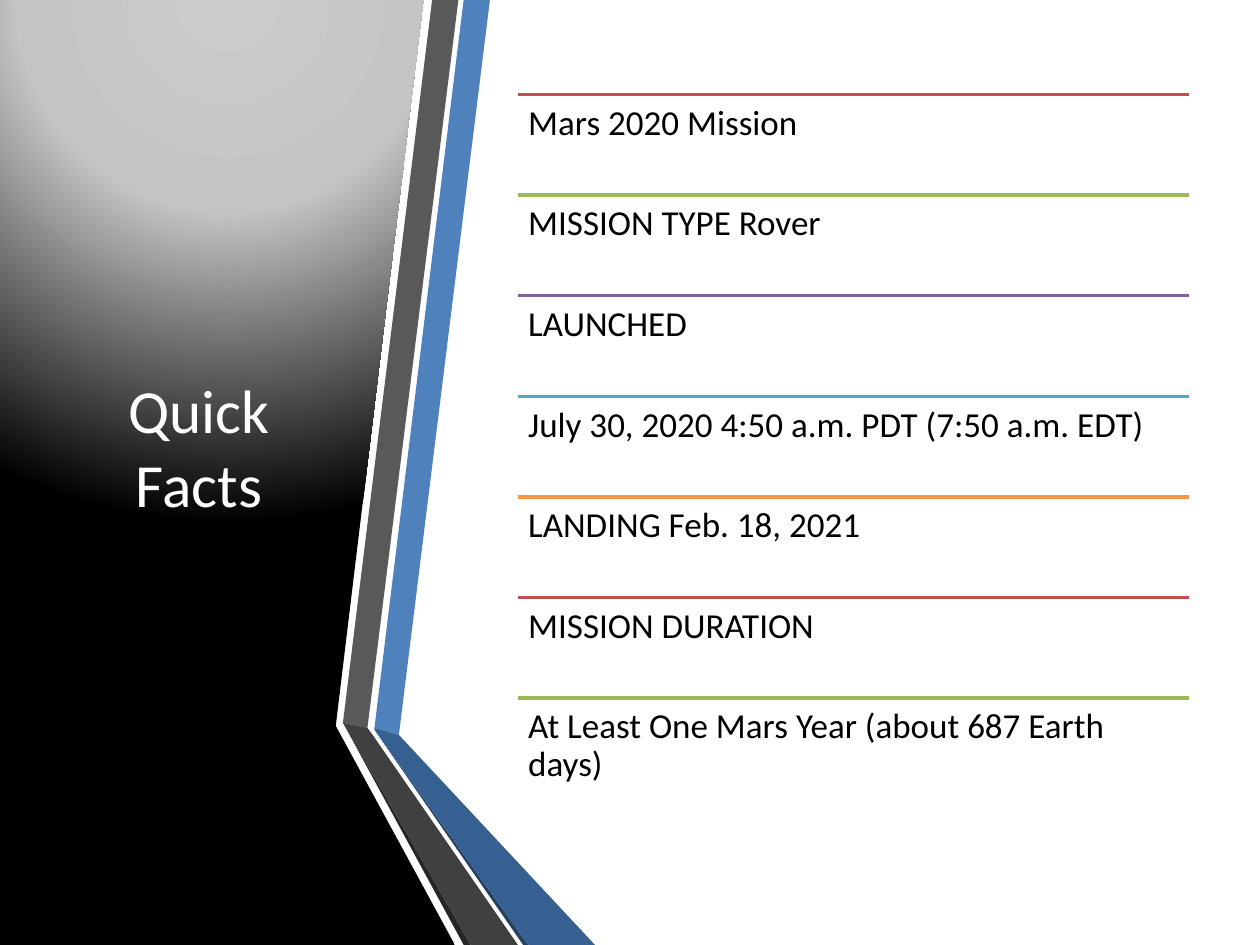
"""Build the Quick Facts slide: a folded ribbon panel beside seven ruled lines."""
from lxml import etree
from pptx import Presentation
from pptx.dml.color import RGBColor
from pptx.enum.shapes import MSO_CONNECTOR
from pptx.enum.text import MSO_ANCHOR, MSO_AUTO_SIZE, PP_ALIGN
from pptx.oxml import parse_xml
from pptx.oxml.ns import qn
from pptx.util import Pt

STRAIGHT = MSO_CONNECTOR.STRAIGHT
MIDDLE, TOP = MSO_ANCHOR.MIDDLE, MSO_ANCHOR.TOP
CENTER, LEFT = PP_ALIGN.CENTER, PP_ALIGN.LEFT
NO_FIT = MSO_AUTO_SIZE.NONE

TITLE = "Quick Facts"
FACTS = [
    "Mars 2020 Mission",
    "MISSION TYPE Rover",
    "LAUNCHED",
    "July 30, 2020 4:50 a.m. PDT (7:50 a.m. EDT)",
    "LANDING Feb. 18, 2021",
    "MISSION DURATION",
    "At Least One Mars Year (about 687 Earth days)",
]
THEME = {
    "font": "Calibri",
    "title": (35, "FFFFFF"),
    "fact": (20, "000000"),
    "rules": ["C0504D", "9BBB59", "8064A2", "4BACC6", "F79646"],
    "glow": [(0, "CCCCCC"), (40, "C4C4C4"), (100, "000000")],
    "blue": "4F81BD", "gray": "595959",
    "blue fold": "376092", "gray fold": "404040",
    "blue edge": "254061", "gray edge": "262626",
}
WIDE, HIGH = 720, 540
PANEL = [(190, 0), (242, 0), (192.2, 414), (192.2, 414.7), (260, HIGH), (0, HIGH), (0, 0)]
BANDS = [
    ("blue", [(213.8, 416.2), (228.2, 419.8), (280, 0), (265, 0)]),
    ("gray", [(262, 0), (247, 0), (195.8, 412.6), (210.2, 415.5)]),
    ("gray edge", [(195.8, 412.6), (265, HIGH), (268.6, HIGH)]),
    ("blue edge", [(213.8, 416.9), (298.8, HIGH), (302.4, HIGH)]),
    ("blue fold", [(213.8, 416.9), (302.4, HIGH), (339.8, HIGH), (228.2, 419.8), (213.8, 416.2)]),
    ("gray fold", [(295.9, HIGH), (213.1, 419.8), (210.2, 415.5), (195.8, 412.6), (268.6, HIGH)]),
]
TITLE_BOX = (31.7, 54, 164.2, 401.8)
ROW_X, ROW_Y, ROW_W, STEP = 295.8, 54, 383.5, 57.5


def put(obj, form):
    for name, value in form.items():
        setattr(obj, name, value)


def paint(fill, tone):
    fill.solid()
    fill.fore_color.rgb = RGBColor.from_string(tone)


def trace(shapes, points):
    pen = shapes.build_freeform(*points[0], scale=float(Pt(1)))
    pen.add_line_segments(points[1:], close=True)
    shape = pen.convert_to_shape()
    shape.shadow.inherit = False
    shape.line.fill.background()
    return shape


def glow(shape):
    stops = "".join(
        f'<a:gs pos="{pos * 1000}"><a:srgbClr val="{tone}"/></a:gs>'
        for pos, tone in THEME["glow"]
    )
    grad = parse_xml(
        '<a:gradFill xmlns:a="http://schemas.openxmlformats.org/drawingml/2006/main">'
        f'<a:gsLst>{stops}</a:gsLst><a:path path="circle">'
        '<a:fillToRect l="50000" t="-80000" r="50000" b="180000"/></a:path></a:gradFill>'
    )
    shape.fill.background()
    props = shape.element.spPr
    props.replace(props.find(qn("a:noFill")), grad)


def write(shape, text, kind, frame, para):
    size, tone = THEME[kind]
    box = shape.text_frame
    box.text = text
    put(box, {"word_wrap": True, "auto_size": NO_FIT, **frame})
    line = box.paragraphs[0]
    put(line, para)
    font = line.runs[0].font
    put(font, {"name": THEME["font"], "size": Pt(size)})
    font.color.rgb = RGBColor.from_string(tone)


def add_title(slide):
    title = slide.shapes.title
    slide.shapes.element.append(title.element)
    put(title, dict(zip(("left", "top", "width", "height"), map(Pt, TITLE_BOX))))
    write(title, TITLE, "title", {"vertical_anchor": MIDDLE}, {"alignment": CENTER})


def add_rows(shapes):
    pad = {f"margin_{side}": Pt(6) for side in ("left", "top", "right", "bottom")}
    rules = THEME["rules"]
    for i, fact in enumerate(FACTS):
        x, y, w = Pt(ROW_X), Pt(ROW_Y + i * STEP), Pt(ROW_W)
        rule = shapes.add_connector(STRAIGHT, x, y, x + w, y)
        rule.line.width = Pt(2)
        paint(rule.line.fill, rules[i % len(rules)])
        etree.SubElement(rule.element.spPr, qn("a:effectLst"))
        box = shapes.add_textbox(x, y, w, Pt(STEP))
        write(box, fact, "fact", {"vertical_anchor": TOP, **pad},
              {"alignment": LEFT, "line_spacing": 0.9, "space_after": Pt(7)})


def main():
    deck = Presentation()
    put(deck, {"slide_width": Pt(WIDE), "slide_height": Pt(HIGH)})
    slide = deck.slides.add_slide(deck.slide_layouts[5])
    glow(trace(slide.shapes, PANEL))
    ribbon = slide.shapes.add_group_shape().shapes
    for tone, points in BANDS:
        paint(trace(ribbon, points).fill, THEME[tone])
    add_title(slide)
    add_rows(slide.shapes.add_group_shape().shapes)
    deck.save("out.pptx")


if __name__ == "__main__":
    main()
